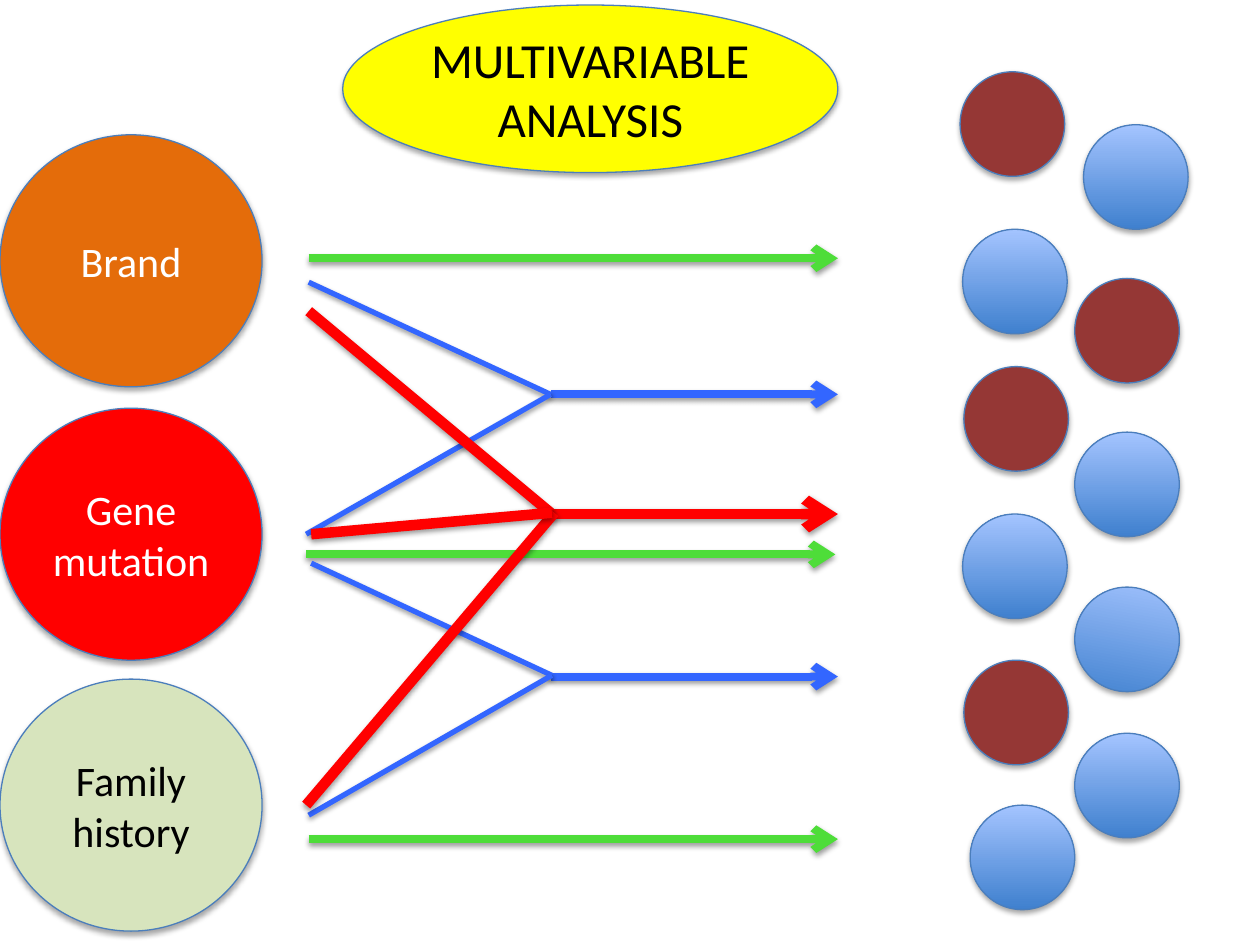
from lxml import etree
from pptx import Presentation
from pptx.dml.color import RGBColor
from pptx.enum.shapes import MSO_CONNECTOR, MSO_SHAPE
from pptx.enum.text import MSO_ANCHOR, PP_ALIGN
from pptx.oxml import parse_xml
from pptx.oxml.ns import nsdecls, qn
from pptx.util import Inches, Pt

BLACK = RGBColor(0x00, 0x00, 0x00)
WHITE = RGBColor(0xFF, 0xFF, 0xFF)
YELLOW = RGBColor(0xFF, 0xFF, 0x00)
ORANGE = RGBColor(0xE4, 0x6C, 0x0A)
RED = RGBColor(0xFF, 0x00, 0x00)
PALE_GREEN = RGBColor(0xD7, 0xE4, 0xBD)
GREEN = RGBColor(0x4E, 0xDD, 0x39)
BLUE = RGBColor(0x33, 0x66, 0xFF)
MAROON = RGBColor(0x95, 0x37, 0x35)
OUTLINE = RGBColor(0x4B, 0x7E, 0xBC)
SKY_DARK = RGBColor(0x3F, 0x80, 0xCE)
SKY_LIGHT = RGBColor(0xA4, 0xC4, 0xFF)

prs = Presentation()
prs.slide_width, prs.slide_height = Inches(10), Inches(7.5)
slide = prs.slides.add_slide(prs.slide_layouts[6])


def add_shadow(item, distance, opacity):
    """Give a shape or connector a soft shadow straight below it."""
    item._element.spPr.append(parse_xml(
        f'<a:effectLst {nsdecls("a")}>'
        f'<a:outerShdw blurRad="{Pt(3.1)}" dist="{Pt(distance)}" dir="5400000" rotWithShape="0">'
        f'<a:srgbClr val="000000"><a:alpha val="{opacity * 1000}"/></a:srgbClr>'
        '</a:outerShdw></a:effectLst>'))


def add_oval(left, top, width, height, color=None):
    """Add an outlined oval; without a colour it gets the sky gradient."""
    oval = slide.shapes.add_shape(MSO_SHAPE.OVAL, Inches(left), Inches(top),
                                  Inches(width), Inches(height))
    if color is None:
        oval.fill.gradient()
        oval.fill.gradient_angle = 90
        for stop, shade in zip(oval.fill.gradient_stops, (SKY_DARK, SKY_LIGHT)):
            stop.color.rgb = shade
        oval.fill.gradient_stops[0].position = 0
        oval.fill.gradient_stops[1].position = 1
    else:
        oval.fill.solid()
        oval.fill.fore_color.rgb = color
    oval.line.color.rgb = OUTLINE
    oval.line.width = Pt(0.75)
    add_shadow(oval, 1.8, 35)
    return oval


# Patients on the right: left, top, colour, rotation
patients = [
    (7.62, 0.57, MAROON, 0), (8.53, 5.82, None, 0), (8.53, 3.43, None, 0),
    (7.7, 6.39, None, 0), (8.53, 4.66, None, 10.2), (8.53, 2.21, MAROON, 0),
    (8.6, 0.99, None, 0), (7.65, 5.24, MAROON, 0), (7.64, 4.08, None, 0),
    (7.65, 2.91, MAROON, 0), (7.64, 1.82, None, 0),
]
for left, top, color, rotation in patients:
    add_oval(left, top, 0.83, 0.83, color).rotation = rotation

# Factors on the left and the heading: position, fill, lines, size, text colour
labels = [
    ((0, 5.39, 2.08, 2), PALE_GREEN, ["Family history"], 24, BLACK),
    ((0, 3.24, 2.08, 2), RED, ["Gene mutation"], 24, WHITE),
    ((0, 1.07, 2.08, 2), ORANGE, ["Brand"], 24, WHITE),
    ((2.72, 0.04, 3.93, 1.33), YELLOW, ["MULTIVARIABLE", "ANALYSIS"], 28, BLACK),
]
for box, fill, lines, size, text_color in labels:
    frame = add_oval(*box, fill).text_frame
    frame.word_wrap = True
    frame.vertical_anchor = MSO_ANCHOR.MIDDLE
    for i, line in enumerate(lines):
        paragraph = frame.add_paragraph() if i else frame.paragraphs[0]
        paragraph.alignment = PP_ALIGN.CENTER
        run = paragraph.add_run()
        run.text = line
        run.font.name = "Calibri"
        run.font.size = Pt(size)
        run.font.color.rgb = text_color

# Effects: single (green), pairwise (blue) and three-way (red)
# start x, start y, end x, end y, colour, width, arrowhead
effects = [
    (2.45, 2.05, 6.65, 2.05, GREEN, 4.5, True),
    (2.43, 4.4, 6.63, 4.4, GREEN, 4.5, True),
    (2.45, 6.66, 6.65, 6.66, GREEN, 4.5, True),
    (4.37, 3.13, 6.65, 3.13, BLUE, 4.5, True),
    (2.45, 2.24, 4.37, 3.13, BLUE, 3, False),
    (2.43, 4.24, 4.37, 3.13, BLUE, 3, False),
    (4.37, 5.37, 6.65, 5.37, BLUE, 4.5, True),
    (2.47, 4.47, 4.38, 5.36, BLUE, 3, False),
    (2.45, 6.47, 4.38, 5.36, BLUE, 3, False),
    (4.37, 4.08, 6.65, 4.08, RED, 6, True),
    (2.45, 2.47, 4.37, 4.07, RED, 6, False),
    (2.43, 6.39, 4.4, 4.07, RED, 6, False),
    (2.47, 4.24, 4.38, 4.07, RED, 6, False),
]
for x1, y1, x2, y2, color, width, has_head in effects:
    effect = slide.shapes.add_connector(MSO_CONNECTOR.STRAIGHT, Inches(x1), Inches(y1),
                                        Inches(x2), Inches(y2))
    effect.line.color.rgb = color
    effect.line.width = Pt(width)
    if has_head:
        etree.SubElement(effect.line._get_or_add_ln(), qn("a:tailEnd"), type="arrow")
    add_shadow(effect, 1.6, 38)

prs.save("out.pptx")
